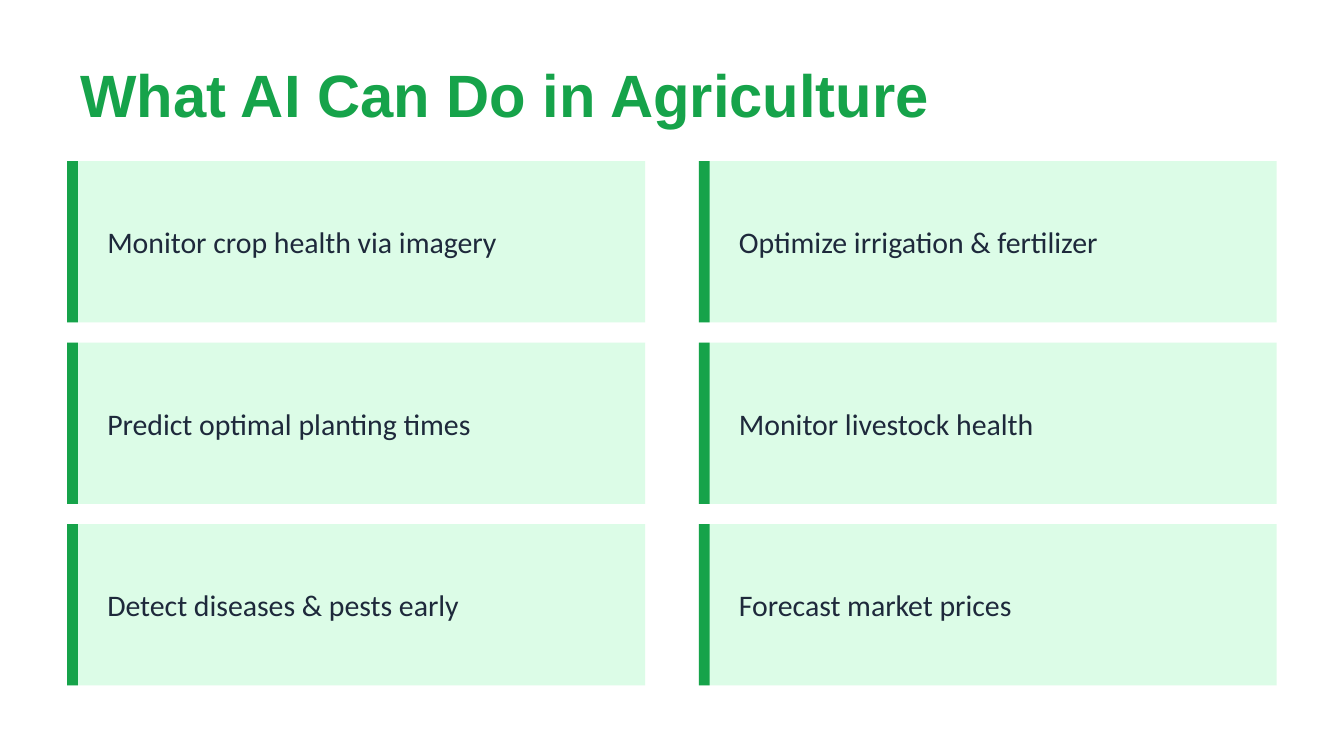
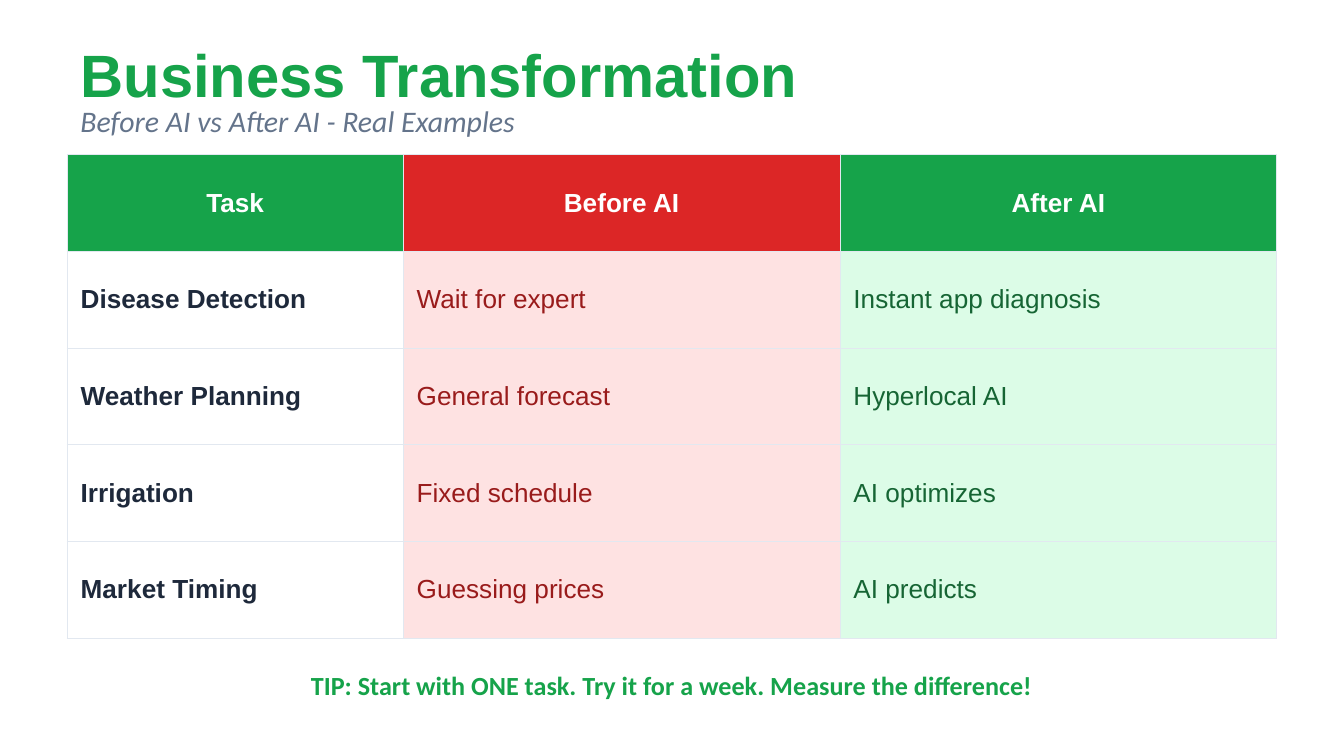
import pptx
import pptx.dml.color
import pptx.enum.shapes
import pptx.enum.text
import pptx.oxml
import pptx.oxml.ns
import pptx.util

Pt = pptx.util.Pt
ALIGN = pptx.enum.text.PP_ALIGN
MIDDLE = pptx.enum.text.MSO_ANCHOR.MIDDLE

GREEN, PALE_GREEN, DARK_GREEN = "16A34A", "DCFCE7", "166534"
RED, PALE_RED, DARK_RED = "DC2626", "FEE2E2", "991B1B"
INK, GREY, WHITE, RULE = "1E293B", "64748B", "FFFFFF", "E2E8F0"
HEADING_FONT, BODY_FONT = "Arial", "Calibri"
MARGIN, WIDTH = 36, 648


def rgb(value):
    return pptx.dml.color.RGBColor.from_string(value)


def write(tf, text, size=16, font=BODY_FONT, color=INK, bold=False,
          italic=False, align=ALIGN.LEFT):
    """Fill a text frame with one formatted paragraph."""
    p = tf.paragraphs[0]
    p.alignment = align
    r = p.add_run()
    r.text = text
    r.font.size = Pt(size)
    r.font.name = font
    r.font.color.rgb = rgb(color)
    r.font.bold = bold
    r.font.italic = italic


def add_borders(cell, color, width):
    tc_pr = cell._tc.get_or_add_tcPr()
    for side in ("lnL", "lnR", "lnT", "lnB"):
        tc_pr.append(pptx.oxml.parse_xml(
            f'<a:{side} {pptx.oxml.ns.nsdecls("a")} w="{Pt(width)}">'
            f'<a:solidFill><a:srgbClr val="{color}"/></a:solidFill></a:{side}>'))


class Deck:
    """The presentation, its style and the slide being built."""

    def __init__(self):
        self.prs = pptx.Presentation()
        self.prs.slide_width, self.prs.slide_height = Pt(720), Pt(405)
        self.s = None

    def slide(self, title, top, height):
        """Start a slide with a title."""
        self.s = self.prs.slides.add_slide(self.prs.slide_layouts[5])
        sp = self.s.shapes.title
        sp.left, sp.top = Pt(MARGIN), Pt(top)
        sp.width, sp.height = Pt(WIDTH), Pt(height)
        self.frame(sp, title, size=32, font=HEADING_FONT, color=GREEN, bold=True)

    def frame(self, sp, text, **style):
        """Write wrapped, vertically centred text in a shape."""
        tf = sp.text_frame
        tf.word_wrap = True
        tf.auto_size = pptx.enum.text.MSO_AUTO_SIZE.NONE
        tf.vertical_anchor = MIDDLE
        write(tf, text, **style)

    def text(self, text, left, top, width, height, **style):
        sp = self.s.shapes.add_textbox(Pt(left), Pt(top), Pt(width), Pt(height))
        self.frame(sp, text, **style)

    def rect(self, left, top, width, height, color):
        sp = self.s.shapes.add_shape(pptx.enum.shapes.MSO_SHAPE.RECTANGLE,
                                     Pt(left), Pt(top), Pt(width), Pt(height))
        sp.shadow.inherit = False
        sp.fill.solid()
        sp.fill.fore_color.rgb = rgb(color)
        sp.line.fill.background()

    def card(self, text, left, top, width, height):
        """A pale panel with a green edge and a line of text."""
        self.rect(left, top, width, height, PALE_GREEN)
        self.rect(left, top, 5.76, height, GREEN)
        self.text(text, left + 14.4, top + 10.8, width - 28.8, height - 21.6)

    def table(self, rows, top, row_height, columns):
        """columns: (width, header fill, body fill or None, body color, bold)."""
        table = self.s.shapes.add_table(
            len(rows), len(columns), Pt(MARGIN), Pt(top),
            Pt(WIDTH), Pt(row_height * len(rows))).table
        table.horz_banding = False
        for row in table.rows:
            row.height = Pt(row_height)
        for j, (width, head_fill, body_fill, color, bold) in enumerate(columns):
            table.columns[j].width = Pt(width)
            for i, row in enumerate(rows):
                if i == 0:
                    fill = head_fill
                    style = dict(color=WHITE, bold=True, align=ALIGN.CENTER)
                else:
                    fill = body_fill
                    style = dict(color=color, bold=bold)
                self.cell(table.cell(i, j), row[j], fill, **style)

    def cell(self, cell, text, fill, **style):
        add_borders(cell, RULE, 0.5)
        if fill:
            cell.fill.solid()
            cell.fill.fore_color.rgb = rgb(fill)
        else:
            cell.fill.background()
        cell.vertical_anchor = MIDDLE
        write(cell.text_frame, text, size=14, font=HEADING_FONT, **style)


def build_uses(deck):
    deck.slide("What AI Can Do in Agriculture", 28.8, 43.2)
    uses = [
        ("Monitor crop health via imagery", "Predict optimal planting times",
         "Detect diseases & pests early"),
        ("Optimize irrigation & fertilizer", "Monitor livestock health",
         "Forecast market prices"),
    ]
    card_w, card_h, gap_x, gap_y = 309.6, 86.4, 28.8, 10.8
    for col, column in enumerate(uses):
        for row, use in enumerate(column):
            deck.card(use, MARGIN + col * (card_w + gap_x),
                      86.4 + row * (card_h + gap_y), card_w, card_h)


def build_transformation(deck):
    deck.slide("Business Transformation", 21.6, 36)
    deck.text("Before AI vs After AI - Real Examples", MARGIN, 54, WIDTH, 21.6,
              color=GREY, italic=True)
    rows = [
        ("Task", "Before AI", "After AI"),
        ("Disease Detection", "Wait for expert", "Instant app diagnosis"),
        ("Weather Planning", "General forecast", "Hyperlocal AI"),
        ("Irrigation", "Fixed schedule", "AI optimizes"),
        ("Market Timing", "Guessing prices", "AI predicts"),
    ]
    deck.table(rows, 82.8, 51.84, [
        (180, GREEN, None, INK, True),
        (234, RED, PALE_RED, DARK_RED, False),
        (234, GREEN, PALE_GREEN, DARK_GREEN, False),
    ])
    deck.text("TIP: Start with ONE task. Try it for a week. Measure the difference!",
              MARGIN, 352.8, WIDTH, 28.8,
              size=14, color=GREEN, bold=True, align=ALIGN.CENTER)


def main():
    deck = Deck()
    build_uses(deck)
    build_transformation(deck)
    deck.prs.save("out.pptx")


if __name__ == "__main__":
    main()
